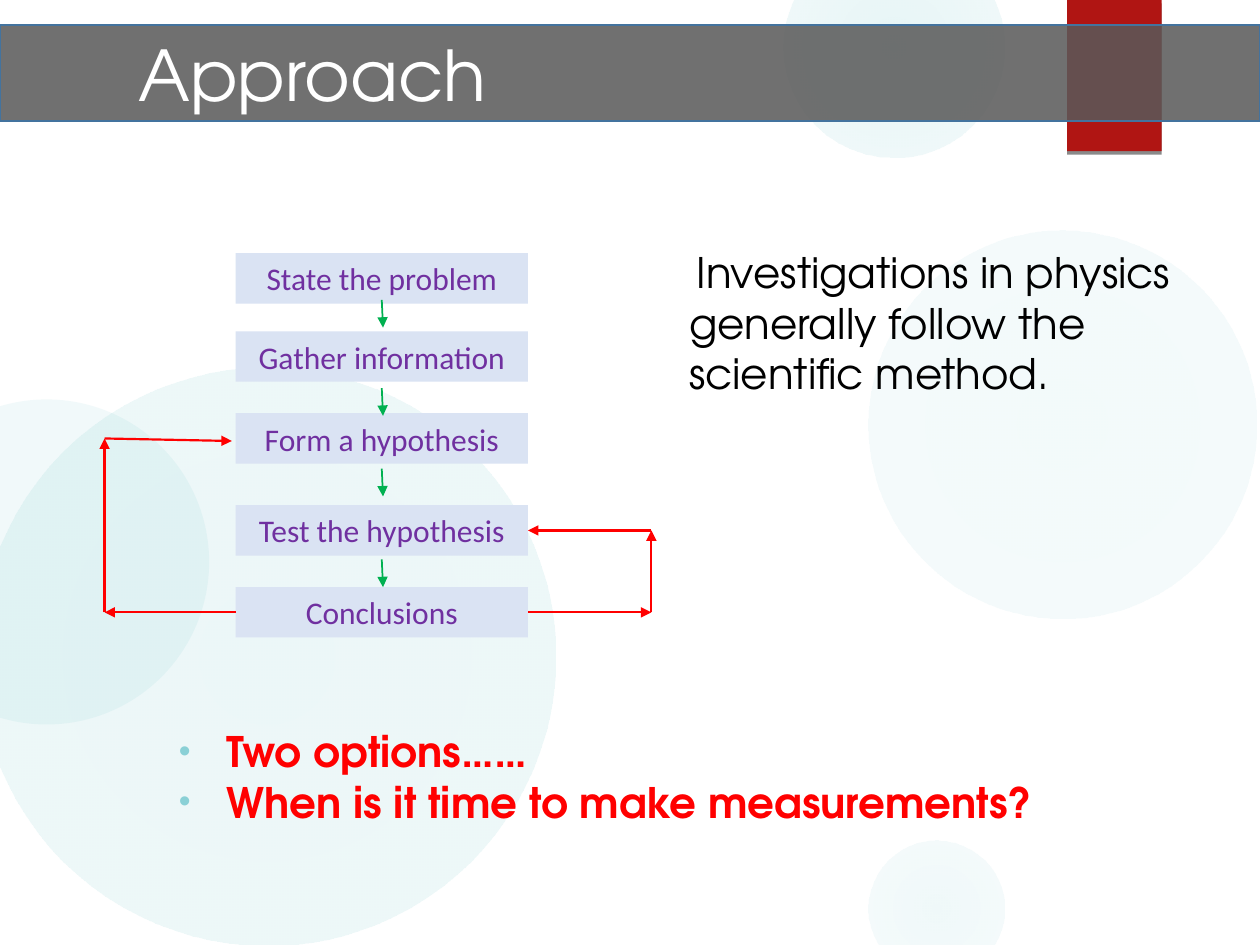
from itertools import pairwise

from lxml import etree
from pptx import Presentation
from pptx.dml.color import RGBColor
from pptx.enum.shapes import MSO_CONNECTOR, MSO_SHAPE
from pptx.enum.text import MSO_ANCHOR, MSO_AUTO_SIZE, PP_ALIGN
from pptx.oxml import parse_xml
from pptx.oxml.ns import nsdecls, qn
from pptx.util import Inches, Pt

OVAL, RECTANGLE = MSO_SHAPE.OVAL, MSO_SHAPE.RECTANGLE
STRAIGHT = MSO_CONNECTOR.STRAIGHT
TOP, MIDDLE = MSO_ANCHOR.TOP, MSO_ANCHOR.MIDDLE
LEFT, CENTER = PP_ALIGN.LEFT, PP_ALIGN.CENTER
NO_AUTOFIT = MSO_AUTO_SIZE.NONE

HEADING_FONT, STEP_FONT = "TeX Gyre Adventor", "Calibri"
TEAL, RED, GREEN = "50B9C1", "FF0000", "00B050"

CIRCLES = [
    (6.89, 1.83, 3.08, 7, 6),
    (6.22, -0.5, 1.75, 14, 7),
    (6.89, 6.67, 1.08, 9, 5),
    (-0.17, 2.92, 4.58, 11, 10),
    (-0.92, 3.17, 2.58, 8, 8),
]
STEPS = [
    ("State the problem", 0),
    ("Gather information", 0.62),
    ("Form a hypothesis", 1.27),
    ("Test the hypothesis", 2),
    ("Conclusions", 2.65),
]
STEP_HEIGHT = 0.4
STEP_ARROW_TOPS = [0.37, 1.07, 1.71, 2.43]


def color(value):
    return RGBColor.from_string(value)


def place(shape, left, top, width, height):
    shape.left, shape.top = Inches(left), Inches(top)
    shape.width, shape.height = Inches(width), Inches(height)


def bring_to_front(shape):
    shape.element.getparent().append(shape.element)


def write(shape, lines, font, size, ink, align=LEFT, anchor=TOP, bold=False):
    frame = shape.text_frame
    frame.text = "\n".join(lines)
    frame.word_wrap = True
    frame.auto_size = NO_AUTOFIT
    frame.vertical_anchor = anchor
    for paragraph in frame.paragraphs:
        paragraph.alignment = align
        paragraph.space_before = Pt(0)
        for run in paragraph.runs:
            run.font.name = font
            run.font.size = Pt(size)
            run.font.bold = bold
            run.font.color.rgb = color(ink)


def add_plain(slide, kind, left, top, width, height, fill):
    shape = slide.shapes.add_shape(
        kind, Inches(left), Inches(top), Inches(width), Inches(height))
    shape.shadow.inherit = False
    shape.fill.solid()
    shape.fill.fore_color.rgb = color(fill)
    shape.line.fill.background()
    return shape


def add_arrow(slide, start, end, ink, weight):
    arrow = slide.shapes.add_connector(STRAIGHT, *map(Inches, (*start, *end)))
    arrow.line.color.rgb = color(ink)
    arrow.line.width = Pt(weight)
    properties = arrow.element.spPr
    head = etree.SubElement(properties.find(qn("a:ln")), qn("a:tailEnd"))
    head.set("type", "triangle")
    etree.SubElement(properties, qn("a:effectLst"))


def add_backdrop(slide):
    for left, top, size, inner, outer in CIRCLES:
        circle = add_plain(slide, OVAL, left, top, size, size, TEAL)
        stops = "".join(
            f'<a:gs pos="{position}"><a:srgbClr val="{TEAL}">'
            f'<a:alpha val="{alpha * 1000}"/></a:srgbClr></a:gs>'
            for position, alpha in ((0, inner), (100000, outer)))
        glow = parse_xml(
            f'<a:gradFill {nsdecls("a")}><a:gsLst>{stops}</a:gsLst>'
            '<a:path path="circle"><a:fillToRect l="50000" t="50000" '
            'r="50000" b="50000"/></a:path></a:gradFill>')
        properties = circle.element.spPr
        properties.replace(properties.find(qn("a:solidFill")), glow)


def add_ribbon(slide, left, top, width, height):
    ribbon = add_plain(slide, RECTANGLE, left, top, width, height, "B01513")
    ribbon.element.spPr.find(qn("a:effectLst")).append(parse_xml(
        f'<a:outerShdw {nsdecls("a")} blurRad="0" dist="{Pt(2)}" dir="5400000">'
        '<a:srgbClr val="000000"><a:alpha val="45000"/></a:srgbClr>'
        '</a:outerShdw>'))


def set_title(title, left, top, width, height):
    place(title, left, top, width, height)
    bring_to_front(title)
    title.fill.solid()
    title.fill.fore_color.rgb = color("595959")
    tint = title.element.spPr.find(qn("a:solidFill"))[0]
    etree.SubElement(tint, qn("a:alpha")).set("val", "86000")
    title.line.color.rgb = color("43739E")
    title.line.width = Pt(1)
    write(title, ["Approach"], HEADING_FONT, 40, "FFFFFF", anchor=MIDDLE)
    title.text_frame.margin_left = Inches(1.1)


def add_statement(slide, left, top, width, height):
    statement = slide.shapes.add_textbox(
        Inches(left), Inches(top), Inches(width), Inches(height))
    write(statement,
          ["Investigations in physics generally follow the scientific method."],
          HEADING_FONT, 24, "000000")
    properties = statement.text_frame.paragraphs[0]._p.get_or_add_pPr()
    properties.set("indent", str(Inches(0.06)))


def add_method_flow(slide, left, top, width):
    right, center = left + width, left + width / 2
    for label, offset in STEPS:
        step = add_plain(slide, RECTANGLE, left, top + offset, width,
                         STEP_HEIGHT, "DAE3F3")
        write(step, [label], STEP_FONT, 18, "7030A0", CENTER, MIDDLE)
    for offset in STEP_ARROW_TOPS:
        start = top + offset
        add_arrow(slide, (center, start), (center + 0.01, start + 0.22), GREEN, 1)

    hypothesis, test, conclusions = (
        top + offset + STEP_HEIGHT / 2 for _, offset in STEPS[2:])
    back_to_hypothesis = [
        (left, conclusions), (left - 1.04, conclusions),
        (left - 1.04, hypothesis), (left - 0.03, hypothesis + 0.02)]
    back_to_test = [
        (right, conclusions), (right + 0.98, conclusions),
        (right + 0.98, test), (right, test)]
    for loop in (back_to_hypothesis, back_to_test):
        for start, end in pairwise(loop):
            add_arrow(slide, start, end, RED, 1.25)


def set_questions(body, left, top, width, height):
    place(body, left, top, width, height)
    bring_to_front(body)
    write(body, ["Two options……", "When is it time to make measurements?"],
          HEADING_FONT, 24, RED, bold=True)
    for paragraph in body.text_frame.paragraphs:
        properties = paragraph._p.get_or_add_pPr()
        properties.set("marL", str(Inches(0.38)))
        properties.set("indent", str(Inches(-0.38)))
        bullet_color = etree.SubElement(properties, qn("a:buClr"))
        etree.SubElement(bullet_color, qn("a:srgbClr")).set("val", "8AD0D6")
        etree.SubElement(properties, qn("a:buSzPct")).set("val", "80000")
        etree.SubElement(properties, qn("a:buFont")).set("typeface", "Arial")
        etree.SubElement(properties, qn("a:buChar")).set("char", "•")


def main():
    presentation = Presentation()
    presentation.slide_width = Inches(10)
    presentation.slide_height = Inches(7.5)
    slide = presentation.slides.add_slide(presentation.slide_layouts[1])
    add_backdrop(slide)
    add_ribbon(slide, 8.47, 0, 0.75, 1.2)
    set_title(slide.shapes.title, 0, 0.2, 10, 0.76)
    add_statement(slide, 5.37, 1.91, 4.42, 1.31)
    add_method_flow(slide, 1.87, 2.01, 2.32)
    set_questions(slide.placeholders[1], 1.32, 5.71, 7.82, 0.91)
    presentation.save("out.pptx")


if __name__ == "__main__":
    main()
